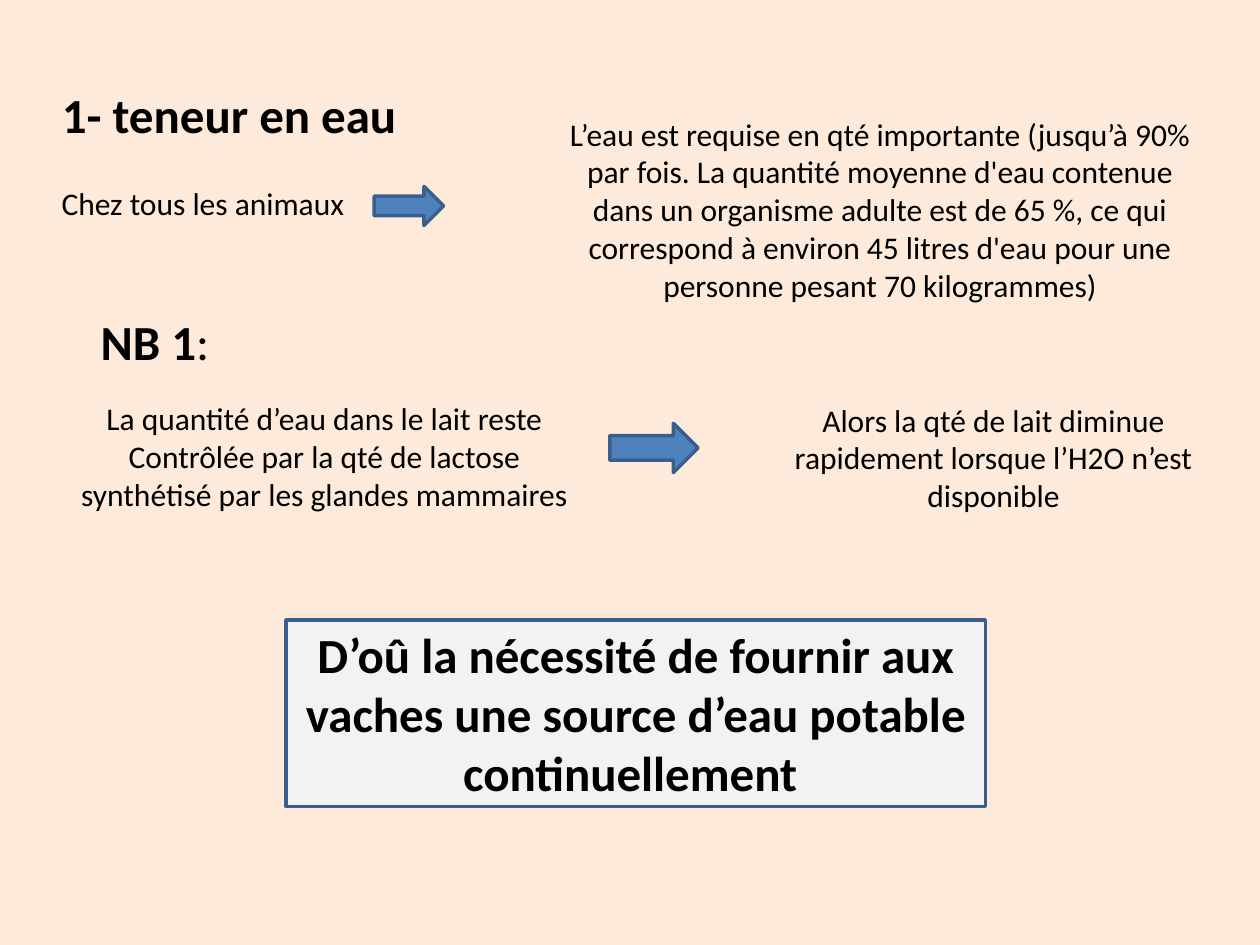
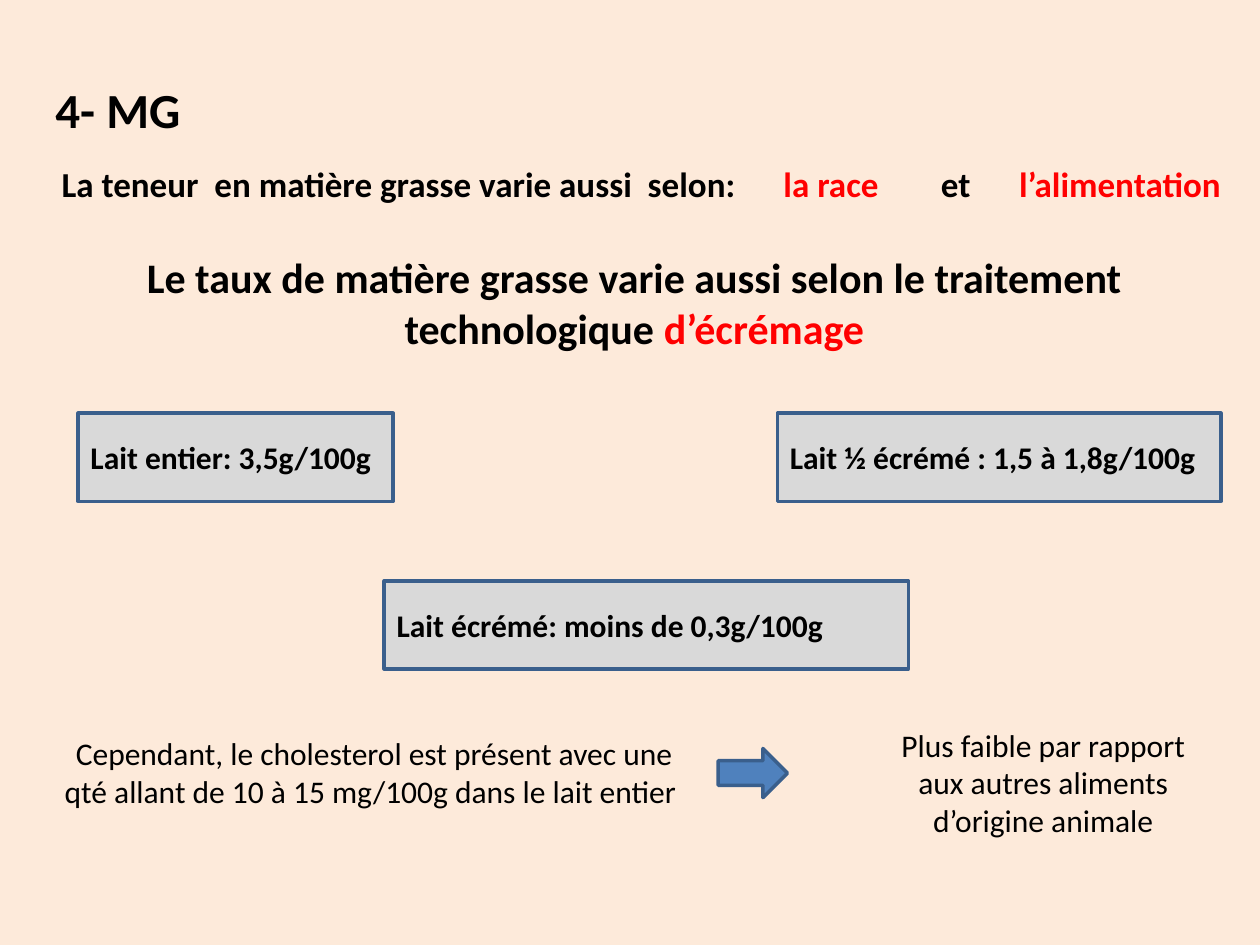
from dataclasses import dataclass

from lxml.etree import SubElement
from pptx import Presentation
from pptx.dml.color import RGBColor
from pptx.enum.shapes import MSO_SHAPE
from pptx.enum.text import MSO_ANCHOR, MSO_AUTO_SIZE, PP_ALIGN
from pptx.oxml.ns import qn
from pptx.util import Inches, Pt


@dataclass(frozen=True)
class Theme:
    font: str = "Calibri"
    background: str = "FDEADA"
    ink: str = "000000"
    accent: str = "FF0000"
    arrow: str = "4F81BD"
    outline: str = "3A5F8C"
    conclusion: str = "F2F2F2"
    milk: str = "D9D9D9"
    heading: int = 28
    statement: int = 24
    lead: int = 20
    body: int = 18
    line: int = 2


THEME = Theme()
LEFT, CENTER = PP_ALIGN.LEFT, PP_ALIGN.CENTER
HEADING = {"size": THEME.heading, "bold": True}
CENTERED = {"align": CENTER}
MILK = {"fill": THEME.milk, "bold": True}

SLIDES = [
    {
        "title": ("1- teneur en eau", (0.39, 0.62, 4.45, 0.57)),
        "texts": [
            ("Chez tous les animaux", (0.39, 1.41, 3.05, 0.4), {}),
            ("L’eau est requise en qté importante (jusqu’à 90% par fois. "
             "La quantité moyenne d'eau contenue dans un organisme adulte est de 65 %, "
             "ce qui correspond à environ 45 litres d'eau pour une personne pesant "
             "70 kilogrammes)", (4.37, 0.86, 5.23, 1.62), CENTERED),
            ([("NB 1", {}), (":", {"bold": False})], (0.7, 2.42, 1.72, 0.57), HEADING),
            ("La quantité d’eau dans le lait reste\n"
             "Contrôlée par la qté de lactose synthétisé par les glandes mammaires",
             (0.39, 3.12, 4.37, 1.01), CENTERED),
            ("Alors la qté de lait diminue rapidement lorsque l’H2O n’est disponible",
             (6.09, 3.13, 3.59, 1.01), CENTERED),
        ],
        "arrows": [(2.97, 1.48, 0.55, 0.31), (4.84, 3.36, 0.7, 0.39)],
        "boxes": [
            ("D’oû la nécessité de fournir aux vaches une source d’eau potable "
             "continuellement ", (2.27, 4.92, 5.55, 1.48),
             {"fill": THEME.conclusion, "align": CENTER, **HEADING}),
        ],
    },
    {
        "title": ("4- MG", (0.34, 0.58, 2.5, 0.57)),
        "texts": [
            ([("La teneur  en matière grasse varie aussi  selon:\t", {}),
              ("la race\t", {"color": THEME.accent}),
              ("et\t", {}),
              ("l’alimentation", {"color": THEME.accent})],
             (0.39, 1.24, 9.5, 0.44),
             {"size": THEME.lead, "bold": True, "tabs": (5.73, 6.98, 7.6)}),
            ([("Le taux de matière grasse varie aussi selon le traitement technologique ", {}),
              ("d’écrémage", {"color": THEME.accent})],
             (0.62, 1.95, 8.83, 0.91),
             {"size": THEME.statement, "bold": True, "align": CENTER}),
            ("Cependant, le cholesterol est présent avec une qté allant de 10 à 15 mg/100g "
             "dans le lait entier ", (0.39, 5.78, 5.16, 0.71), CENTERED),
            ("Plus faible par rapport aux autres aliments d’origine animale",
             (6.95, 5.71, 2.66, 1.01), CENTERED),
        ],
        "arrows": [(5.7, 5.94, 0.55, 0.39)],
        "boxes": [
            ("Lait entier: 3,5g/100g", (0.62, 3.28, 2.5, 0.7), MILK),
            ("Lait écrémé: moins de 0,3g/100g", (3.05, 4.61, 4.16, 0.7), MILK),
            ("Lait ½ écrémé : 1,5 à 1,8g/100g", (6.17, 3.28, 3.52, 0.7), MILK),
        ],
    },
]


def inches(place):
    return [Inches(length) for length in place]


def write(shape, text, *, size=THEME.body, bold=False, color=THEME.ink,
          align=LEFT, anchor=MSO_ANCHOR.TOP, tabs=()):
    frame = shape.text_frame
    frame.word_wrap = True
    frame.auto_size = MSO_AUTO_SIZE.NONE
    frame.vertical_anchor = anchor
    paragraphs = [[(line, {})] for line in text.split("\n")] if isinstance(text, str) else [text]
    for index, pieces in enumerate(paragraphs):
        paragraph = frame.add_paragraph() if index else frame.paragraphs[0]
        paragraph.alignment = align
        if tabs:
            tab_list = SubElement(paragraph._p.get_or_add_pPr(), qn("a:tabLst"))
            for position in tabs:
                SubElement(tab_list, qn("a:tab"), pos=str(Inches(position)), algn="l")
        for words, changes in pieces:
            run = paragraph.add_run()
            run.text = words
            run.font.name = THEME.font
            run.font.size = Pt(size)
            run.font.bold = changes.get("bold", bold)
            run.font.color.rgb = RGBColor.from_string(changes.get("color", color))


def add_title(slide, text, place):
    title = slide.shapes.title
    title.left, title.top, title.width, title.height = inches(place)
    write(title, text, **HEADING)


def add_outlined(slide, kind, place, fill):
    shape = slide.shapes.add_shape(kind, *inches(place))
    shape.shadow.inherit = False
    shape.fill.solid()
    shape.fill.fore_color.rgb = RGBColor.from_string(fill)
    shape.line.color.rgb = RGBColor.from_string(THEME.outline)
    shape.line.width = Pt(THEME.line)
    return shape


def add_box(slide, text, place, fill, **style):
    box = add_outlined(slide, MSO_SHAPE.RECTANGLE, place, fill)
    write(box, text, anchor=MSO_ANCHOR.MIDDLE, **style)


def main():
    presentation = Presentation()
    presentation.slide_width, presentation.slide_height = Inches(10), Inches(7.5)
    background = presentation.slide_master.background.fill
    background.solid()
    background.fore_color.rgb = RGBColor.from_string(THEME.background)
    title_only = presentation.slide_layouts.get_by_name("Title Only")
    for content in SLIDES:
        slide = presentation.slides.add_slide(title_only)
        add_title(slide, *content["title"])
        for text, place, style in content["texts"]:
            write(slide.shapes.add_textbox(*inches(place)), text, **style)
        for place in content["arrows"]:
            add_outlined(slide, MSO_SHAPE.RIGHT_ARROW, place, THEME.arrow)
        for text, place, style in content["boxes"]:
            add_box(slide, text, place, **style)
    presentation.save("out.pptx")


if __name__ == "__main__":
    main()
